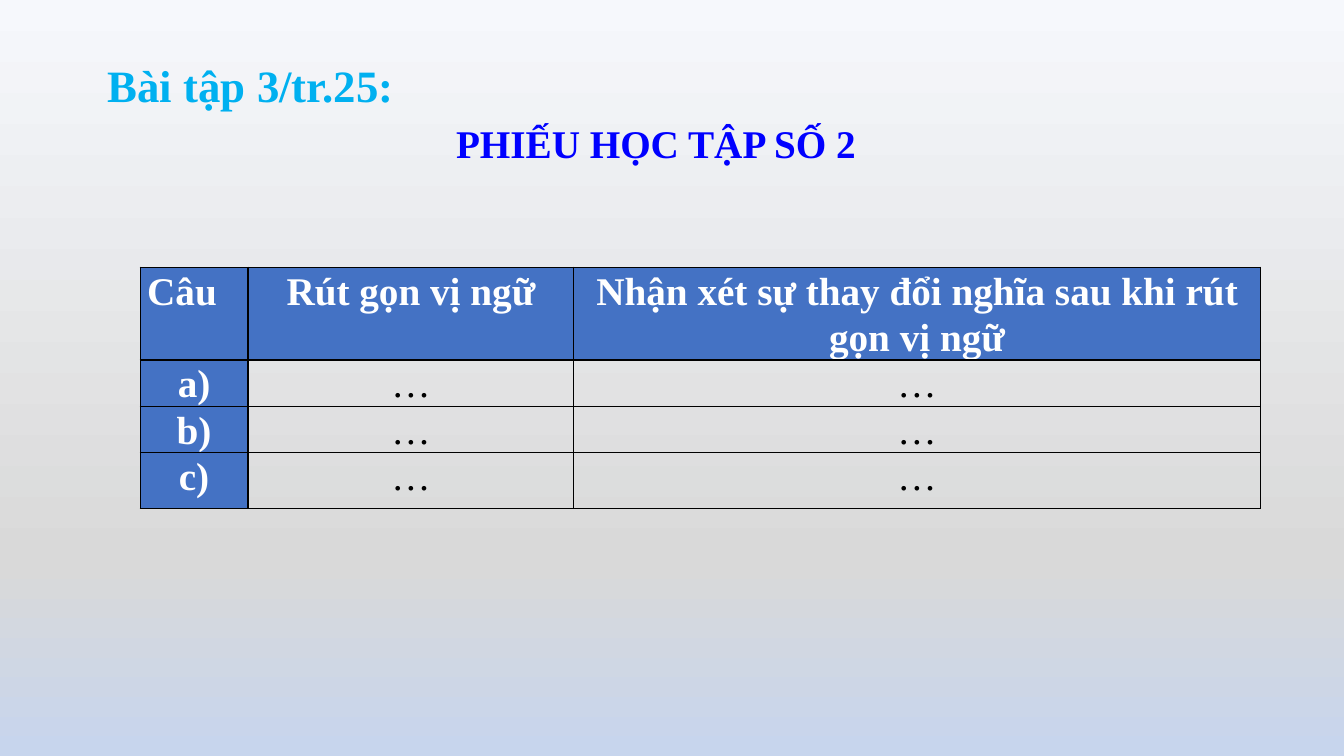
"""Build the worksheet slide: a heading, a title and a table to fill in."""
from lxml.etree import SubElement, fromstring
from pptx import Presentation
from pptx.dml.color import RGBColor
from pptx.enum.text import MSO_ANCHOR, MSO_AUTO_SIZE, PP_ALIGN
from pptx.oxml.ns import nsdecls, qn
from pptx.util import Inches, Pt

COLORS = {
    "top": "F6F8FC", "mid": "D9D9D9", "end": "C7D5ED",
    "head": "4472C4", "white": "FFFFFF", "black": "000000",
    "title": "0000FF", "task": "00B0F0",
}


def write(frame, text, size, color, bold, align, space):
    para = frame.paragraphs[0]
    para.alignment = align
    para.line_spacing = space
    run = para.add_run()
    run.text = text
    style = {"name": "Times New Roman", "size": Pt(size), "bold": bold}
    for key, value in style.items():
        setattr(run.font, key, value)
    run.font.color.rgb = RGBColor.from_string(COLORS[color])


deck = Presentation()
deck.slide_width = Inches(13.33)
deck.slide_height = Inches(7.5)
slide = deck.slides.add_slide(deck.slide_layouts[6])

back = slide.background.fill
back.gradient()
back.gradient_angle = 270
stops = slide.element.find(".//" + qn("a:gsLst"))
for stop in list(stops):
    stops.remove(stop)
for name, place in [("top", 0), ("mid", 74), ("end", 100)]:
    stop = SubElement(stops, qn("a:gs"), pos=str(place * 1000))
    SubElement(stop, qn("a:srgbClr"), val=COLORS[name])

rows = [["Câu", "Rút gọn vị ngữ", "Nhận xét sự thay đổi nghĩa sau khi rút gọn vị ngữ"]]
rows += [[mark, "…", "…"] for mark in ("a)", "b)", "c)")]
widths = [1.07, 3.23, 6.81]
heights = [0.84, 0.4, 0.4, 0.55]
frame = slide.shapes.add_table(
    len(rows), len(widths), Inches(1.39), Inches(2.65),
    Inches(sum(widths)), Inches(sum(heights)))
table = frame.table
for col, width in zip(table.columns, widths):
    col.width = Inches(width)
for row, height in zip(table.rows, heights):
    row.height = Inches(height)

inset = {"margin_left": Inches(0.07), "margin_right": Inches(0.07),
         "margin_top": 0, "margin_bottom": 0}
for r, line in enumerate(rows):
    for c, text in enumerate(line):
        cell = table.cell(r, c)
        for key, value in inset.items():
            setattr(cell, key, value)
        head = r == 0 or c == 0
        if head:
            cell.fill.solid()
            cell.fill.fore_color.rgb = RGBColor.from_string(COLORS["head"])
        else:
            cell.fill.background()
        align = PP_ALIGN.LEFT if r == c == 0 else PP_ALIGN.CENTER
        write(cell.text_frame, text, 28, "white" if head else "black", head, align, 1.07)
        props = cell._tc.get_or_add_tcPr()
        for spot, side in enumerate("LRTB"):
            props.insert(spot, fromstring(
                f'<a:ln{side} {nsdecls("a")} w="{Pt(1)}"><a:solidFill>'
                f'<a:srgbClr val="{COLORS["black"]}"/></a:solidFill></a:ln{side}>'))

labels = [
    ("PHIẾU HỌC TẬP SỐ 2", (4.4, 1.13, 4.21, 0.57), 28, "title",
     PP_ALIGN.CENTER, 1.0, MSO_ANCHOR.MIDDLE, False),
    ("Bài tập 3/tr.25:", (0.97, 0.26, 3.11, 0.91), 32, "task",
     PP_ALIGN.JUSTIFY, 1.5, MSO_ANCHOR.TOP, True),
]
for text, place, size, color, align, space, anchor, wrap in labels:
    box = slide.shapes.add_textbox(*map(Inches, place)).text_frame
    style = {"word_wrap": wrap, "vertical_anchor": anchor,
             "auto_size": MSO_AUTO_SIZE.SHAPE_TO_FIT_TEXT}
    for key, value in style.items():
        setattr(box, key, value)
    write(box, text, size, color, True, align, space)

deck.save("out.pptx")
